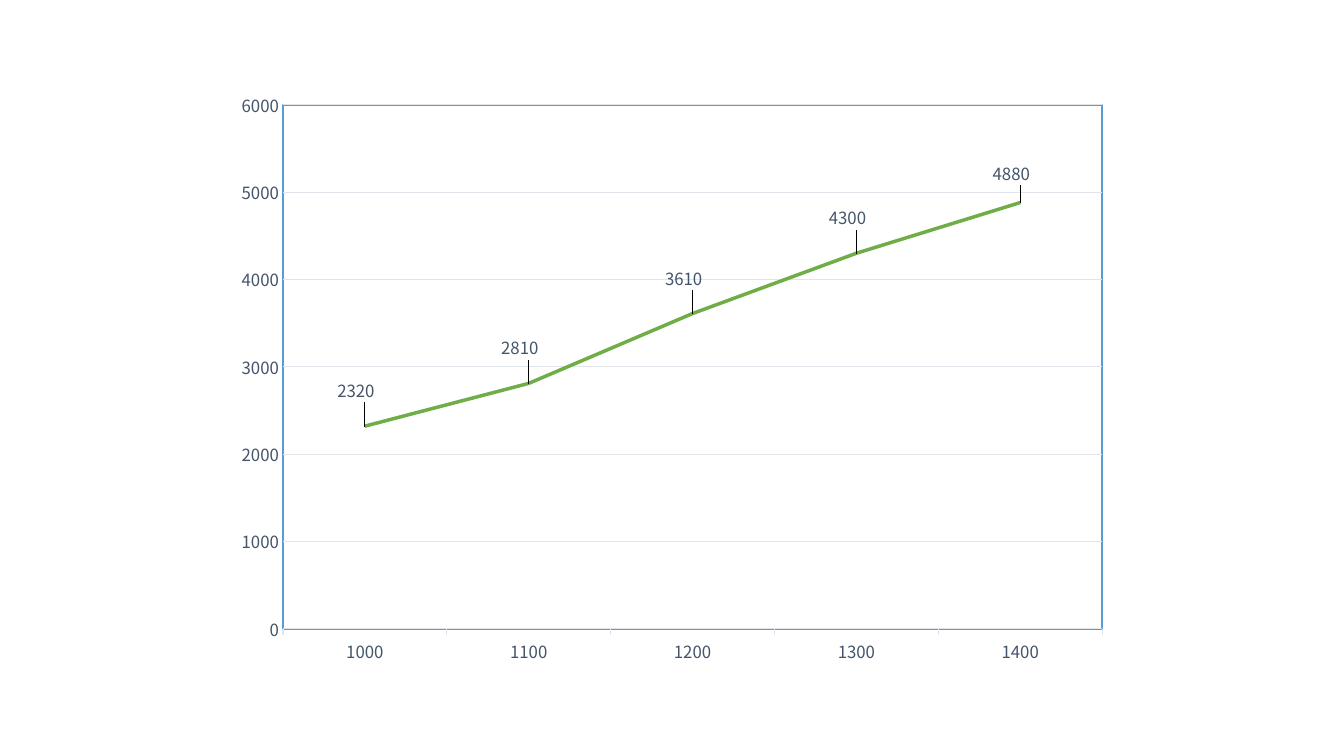
"""Build a slide with one line chart of five labelled values."""
import lxml.etree
import pptx
import pptx.chart.data
import pptx.dml.color
import pptx.enum.chart
import pptx.oxml
import pptx.oxml.ns
import pptx.util

Inches = pptx.util.Inches
Pt = pptx.util.Pt
qn = pptx.oxml.ns.qn

THEME = {
    "font": "Noto Sans CJK SC",
    "text": "44546A",
    "grid": "E0E5EB",
    "series": "70AD47",
    "frame": "5B9BD5",
    "plot": "FFFFFF",
    "label_size": 12,
    "hairline": 0.75,
    "series_line": 2.5,
}
VALUES = {"1000": 2320, "1100": 2810, "1200": 3610, "1300": 4300, "1400": 4880}
LABEL_OFFSETS = [(-0.01, -0.06), (-0.01, -0.06), (-0.01, -0.06), (-0.01, -0.06), (-0.01, -0.05)]


def style_font(font):
    font.name = THEME["font"]
    font.size = Pt(THEME["label_size"])
    font.color.rgb = pptx.dml.color.RGBColor.from_string(THEME["text"])


def manual_layout(**settings):
    layout = lxml.etree.Element(qn("c:layout"))
    manual = lxml.etree.SubElement(layout, qn("c:manualLayout"))
    for name, value in settings.items():
        lxml.etree.SubElement(manual, qn(f"c:{name}")).set("val", str(value))
    return layout


deck = pptx.Presentation()
deck.slide_width = Inches(13.33)
deck.slide_height = Inches(7.5)
page = deck.slides.add_slide(deck.slide_layouts[6])

data = pptx.chart.data.CategoryChartData()
data.categories = list(VALUES)
data.add_series("Series 1", list(VALUES.values()))
chart = page.shapes.add_chart(
    pptx.enum.chart.XL_CHART_TYPE.LINE,
    Inches(2.22), Inches(0.79), Inches(8.89), Inches(5.93), data,
).chart
chart.has_legend = False
chart.has_title = False
style_font(chart.font)

category_axis = chart.category_axis
value_axis = chart.value_axis
for axis in (category_axis, value_axis):
    style_font(axis.tick_labels.font)
    axis.minor_tick_mark = pptx.enum.chart.XL_TICK_MARK.NONE
category_axis.major_tick_mark = pptx.enum.chart.XL_TICK_MARK.OUTSIDE
value_axis.major_tick_mark = pptx.enum.chart.XL_TICK_MARK.NONE
value_axis.minimum_scale = 0
value_axis.maximum_scale = 6000
value_axis.major_unit = 1000
value_axis.has_major_gridlines = True
value_axis.format.line.fill.background()

series = chart.plots[0].series[0]
series.smooth = False
series.marker.style = pptx.enum.chart.XL_MARKER_STYLE.NONE
for line, color, width in (
    (category_axis.format.line, "grid", "hairline"),
    (value_axis.major_gridlines.format.line, "grid", "hairline"),
    (series.format.line, "series", "series_line"),
):
    line.color.rgb = pptx.dml.color.RGBColor.from_string(THEME[color])
    line.width = Pt(THEME[width])

center = pptx.enum.chart.XL_LABEL_POSITION.CENTER
series.data_labels.show_value = True
series.data_labels.position = center
style_font(series.data_labels.font)
for index in range(len(VALUES)):
    label = series.points[index].data_label
    style_font(label.font)
    label.position = center

plot_area = chart.plots[0]._element.getparent()
for label, (x, y) in zip(plot_area.iter(qn("c:dLbl")), LABEL_OFFSETS):
    label.insert(1, manual_layout(x=x, y=y))

for layout in plot_area.findall(qn("c:layout")):
    plot_area.remove(layout)
plot_area.insert(0, manual_layout(
    layoutTarget="inner", xMode="edge", yMode="edge", x=0.066, y=0.042, w=0.914, h=0.877,
))
plot_area.append(pptx.oxml.parse_xml(
    f'<c:spPr {pptx.oxml.ns.nsdecls("c", "a")}>'
    f'<a:solidFill><a:srgbClr val="{THEME["plot"]}"/></a:solidFill>'
    f'<a:ln w="{Pt(1.5)}"><a:solidFill><a:srgbClr val="{THEME["frame"]}"/></a:solidFill></a:ln>'
    '</c:spPr>'
))

deck.save("out.pptx")
